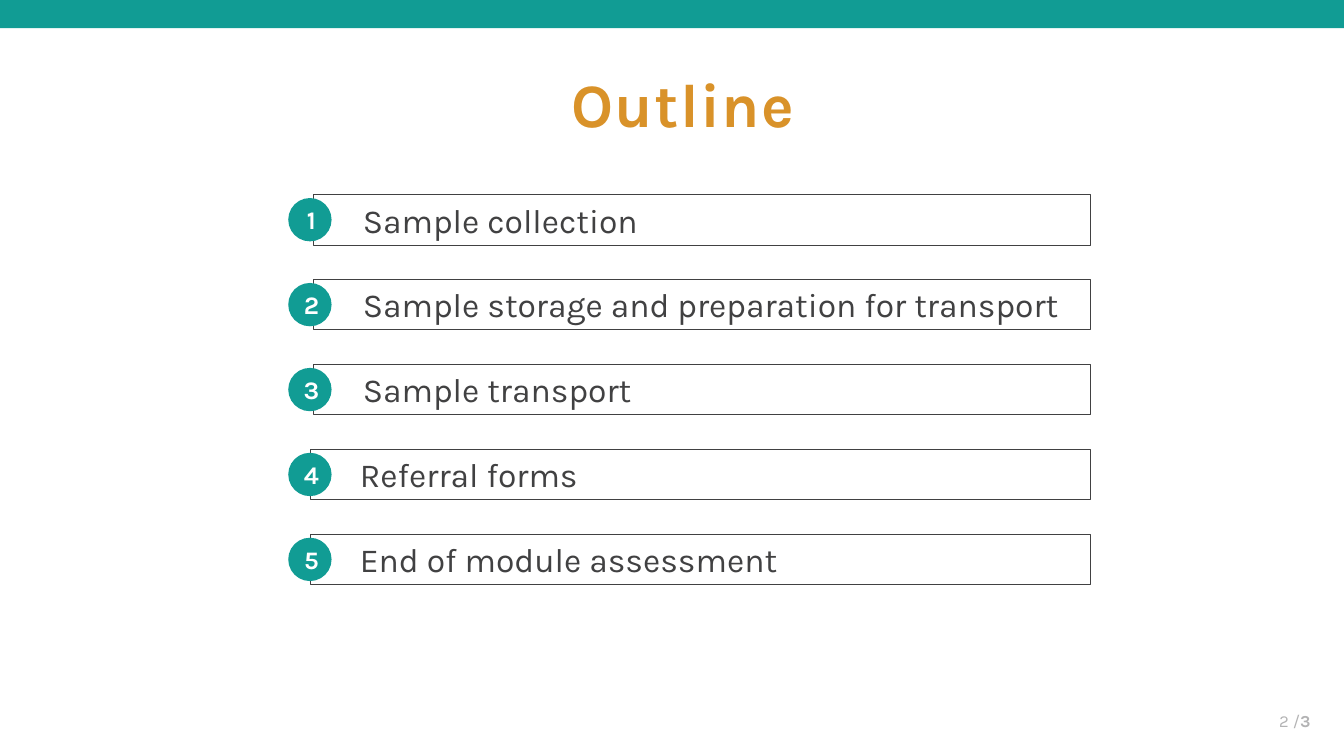
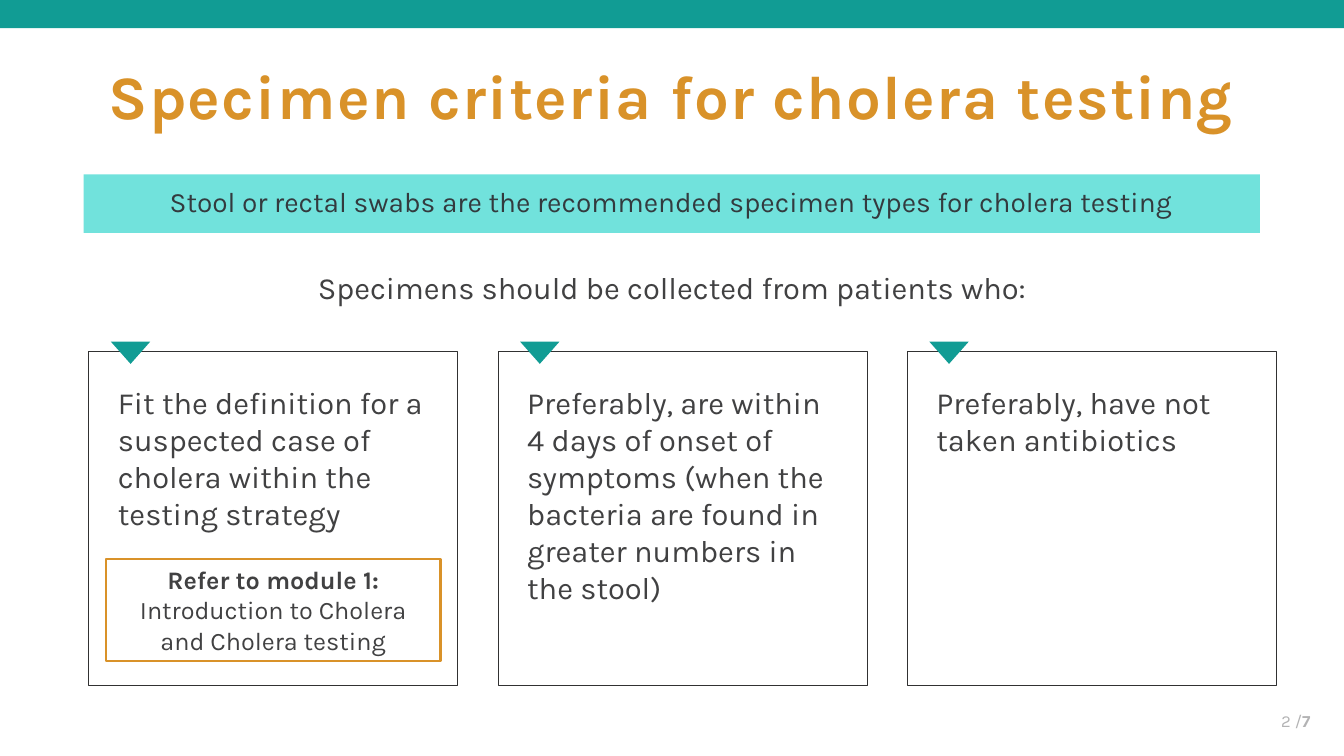
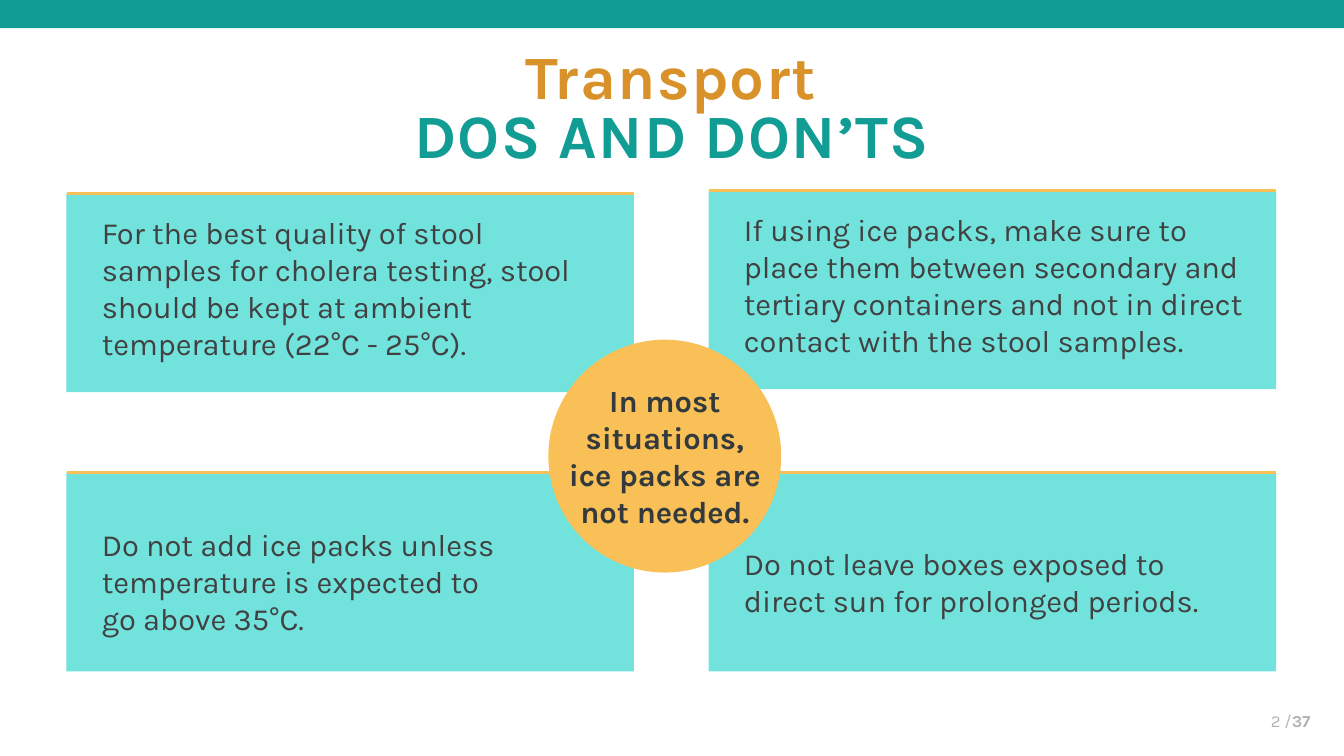
from dataclasses import dataclass

from lxml import etree
from pptx import Presentation
from pptx import util as u
from pptx.dml.color import RGBColor
from pptx.enum import shapes, text
from pptx.oxml import ns

CELL = 0.1
COLUMNS, ROWS = 133.33, 75
FONT = "Karla"
TEAL, AQUA, AMBER, GOLD = "119C94", "71E2DC", "D99229", "F8C056"
INK, SLATE, EDGE, GREY, WHITE = "414142", "333A3E", "313132", "B3B3B4", "FFFFFF"
RECT, OVAL = shapes.MSO_SHAPE.RECTANGLE, shapes.MSO_SHAPE.OVAL
TRIANGLE = shapes.MSO_SHAPE.ISOSCELES_TRIANGLE
LEFT, CENTER, RIGHT = text.PP_ALIGN.LEFT, text.PP_ALIGN.CENTER, text.PP_ALIGN.RIGHT
TOP, MIDDLE = text.MSO_ANCHOR.TOP, text.MSO_ANCHOR.MIDDLE
INSETS = (1, 0.5, 1, 0.5)


@dataclass
class Box:
    left: float
    top: float
    width: float
    height: float

    def inner(self, left, top, width, height):
        return Box(self.left + left, self.top + top, width, height)

    def lengths(self):
        return [cells(n) for n in (self.left, self.top, self.width, self.height)]


def cells(count):
    return u.Inches(count * CELL)


def color(value):
    return RGBColor.from_string(value)


def assign(target, formats):
    for name, value in formats.items():
        setattr(target, name, value)


def add_figure(page, kind, box, fill=None, line=None, weight=0.5):
    figure = page.shapes.add_shape(kind, *box.lengths())
    figure.shadow.inherit = False
    if fill:
        figure.fill.solid()
        figure.fill.fore_color.rgb = color(fill)
    else:
        figure.fill.background()
    if line:
        figure.line.color.rgb = color(line)
        figure.line.width = u.Pt(weight)
    else:
        figure.line.fill.background()
    return figure


def write(holder, spans, size, align=LEFT, anchor=TOP, insets=INSETS, spacing=None, tracking=0):
    frame = holder.text_frame
    margins = zip(("left", "top", "right", "bottom"), insets)
    assign(frame, {f"margin_{side}": cells(inset) for side, inset in margins})
    assign(frame, {"word_wrap": True, "vertical_anchor": anchor})
    para = frame.paragraphs[0]
    assign(para, {"alignment": align, "line_spacing": spacing})
    for words, ink, bold in spans:
        for index, line in enumerate(words.split("\n")):
            if index:
                para.add_line_break()
            if not line:
                continue
            span = para.add_run()
            span.text = line
            assign(span.font, {"name": FONT, "size": u.Pt(size), "bold": bold})
            span.font.color.rgb = color(ink)
            if tracking:
                span._r.get_or_add_rPr().set("spc", str(tracking * 100))


def add_text(page, box, spans, size, **layout):
    write(page.shapes.add_textbox(*box.lengths()), spans, size, **layout)


def add_rule(page, box, ink, weight):
    left, top, width, _ = box.lengths()
    rule = page.shapes.add_connector(shapes.MSO_CONNECTOR.STRAIGHT, left, top, left + width, top)
    rule.line.color.rgb = color(ink)
    rule.line.width = u.Pt(weight)
    etree.SubElement(rule._element.spPr, ns.qn("a:effectLst"))


def add_page(deck, title_box, title, number):
    page = deck.slides.add_slide(deck.slide_layouts[6])
    add_figure(page, RECT, Box(0, 0, COLUMNS, 2.8), TEAL)
    spans = [(words, ink, True) for words, ink in title]
    add_text(page, title_box, spans, 44, align=CENTER, anchor=MIDDLE, spacing=0.8, tracking=1)
    footer = [("2 /", GREY, False), (number, GREY, True)]
    add_text(page, Box(101, 69.5, 30, 4), footer, 12, align=RIGHT, anchor=MIDDLE)
    return page


def add_outline_item(page, box, indent, number, words):
    bar = add_figure(page, RECT, box.inner(indent, 0, box.width - indent, box.height), line=INK)
    write(bar, [(words, INK, False)], 24, insets=(4.9, 0.5, 1, 0.5))
    badge = add_figure(page, OVAL, box.inner(0, 0.35, 4.3, 4.3), TEAL)
    write(badge, [(str(number), WHITE, True)], 18, CENTER, MIDDLE, (0.3, 0, 0, 0))


def add_outline(page, box, items):
    pitch = (box.height - 5) / (len(items) - 1)
    for index, (indent, words) in enumerate(items):
        row = box.inner(0, index * pitch, box.width, 5)
        add_outline_item(page, row, indent, index + 1, words)


def add_criterion(page, box, words):
    add_figure(page, RECT, box, WHITE, EDGE, 0.25)
    body = box.inner(0, 2.8, 35, box.height - 4)
    add_text(page, body, [(words, INK, False)], 22, insets=(2.9, 0.5, 1, 0.5))
    add_figure(page, TRIANGLE, box.inner(2.2, -0.9, 3.9, 2.2), TEAL).rotation = 180


def add_criteria(page, box, items):
    width = 36.6
    pitch = (box.width - width) / (len(items) - 1)
    for index, words in enumerate(items):
        add_criterion(page, box.inner(index * pitch, 0, width, box.height), words)


def add_advice(page, box, words, anchor, top_inset):
    panel = add_figure(page, RECT, box, AQUA)
    write(panel, [(words, INK, False)], 22, anchor=anchor, insets=(3.5, top_inset, 3.1, 2))
    add_rule(page, box, GOLD, 2.25)


def add_callout(page, box, words):
    add_figure(page, OVAL, box, GOLD)
    body = box.inner(0, 3.7, box.width, 15.8)
    add_text(page, body, [(words, SLATE, True)], 22, align=CENTER)


def build_outline(deck):
    page = add_page(deck, Box(9.5, 2.7, 116.5, 16.4), [("Outline", AMBER)], "3")
    add_outline(page, Box(28.6, 19.3, 79.6, 38.7), [
        (2.5, "Sample collection"),
        (2.5, "Sample storage and preparation for transport"),
        (2.5, "Sample transport"),
        (2.2, "Referral forms"),
        (2.2, "End of module assessment"),
    ])


def build_criteria(deck):
    title = [("Specimen criteria for cholera testing", AMBER)]
    page = add_page(deck, Box(8.4, 2.8, 116.5, 14.5), title, "7")
    banner = Box(8.3, 17.3, 116.7, 5.8)
    add_figure(page, RECT, banner, AQUA)
    advice = "Stool or rectal swabs are the recommended specimen types for cholera testing"
    add_text(page, banner.inner(1.6, 0.9, 113.4, 4.9), [(advice, SLATE, False)], 20,
             align=CENTER, insets=(0.5,) * 4, spacing=0.9)
    lead = "Specimens should be collected from patients who:"
    add_text(page, Box(8.4, 26.2, 116.5, 4.7), [(lead, INK, False)], 22, align=CENTER)
    add_criteria(page, Box(8.8, 34.8, 117.8, 33.2), [
        "Fit the definition for a suspected case of cholera within the testing strategy",
        "Preferably, are within 4 days of onset of symptoms "
        "(when the bacteria are found in greater numbers in the stool)",
        "Preferably, have not taken antibiotics",
    ])
    reference = add_figure(page, RECT, Box(10.5, 55.5, 33.2, 10.1), line=AMBER, weight=1.5)
    write(reference, [
        ("Refer to module 1: ", INK, True),
        ("Introduction to Cholera\nand Cholera testing", INK, False),
    ], 18, CENTER)


def build_transport(deck):
    title = [("Transport\n", AMBER), ("DOS AND DON’TS", TEAL)]
    page = add_page(deck, Box(13.5, 2.8, 106.3, 16.4), title, "37")
    left, right = 6.6, 70.3
    for column, row, anchor, inset, words in (
        (left, 19.2, TOP, 2, "For the best quality of stool samples for cholera testing, "
                             "stool should be kept at ambient temperature (22°C - 25°C)."),
        (left, 46.9, MIDDLE, 3.9, "Do not add ice packs unless temperature is expected to\n"
                                  "go above 35°C."),
        (right, 18.9, TOP, 2, "If using ice packs, make sure to place them between secondary and "
                              "tertiary containers and not in direct contact with the stool samples."),
        (right, 46.9, MIDDLE, 3.9, "Do not leave boxes exposed to direct sun for prolonged periods."),
    ):
        add_advice(page, Box(column, row, 56.3, 19.7), words, anchor, inset)
    add_callout(page, Box(54.4, 33.7, 23.1, 23.1),
                "In most situations,\nice packs are not needed.")


def main():
    deck = Presentation()
    assign(deck, {"slide_width": cells(COLUMNS), "slide_height": cells(ROWS)})
    for build in (build_outline, build_criteria, build_transport):
        build(deck)
    deck.save("out.pptx")


if __name__ == "__main__":
    main()
